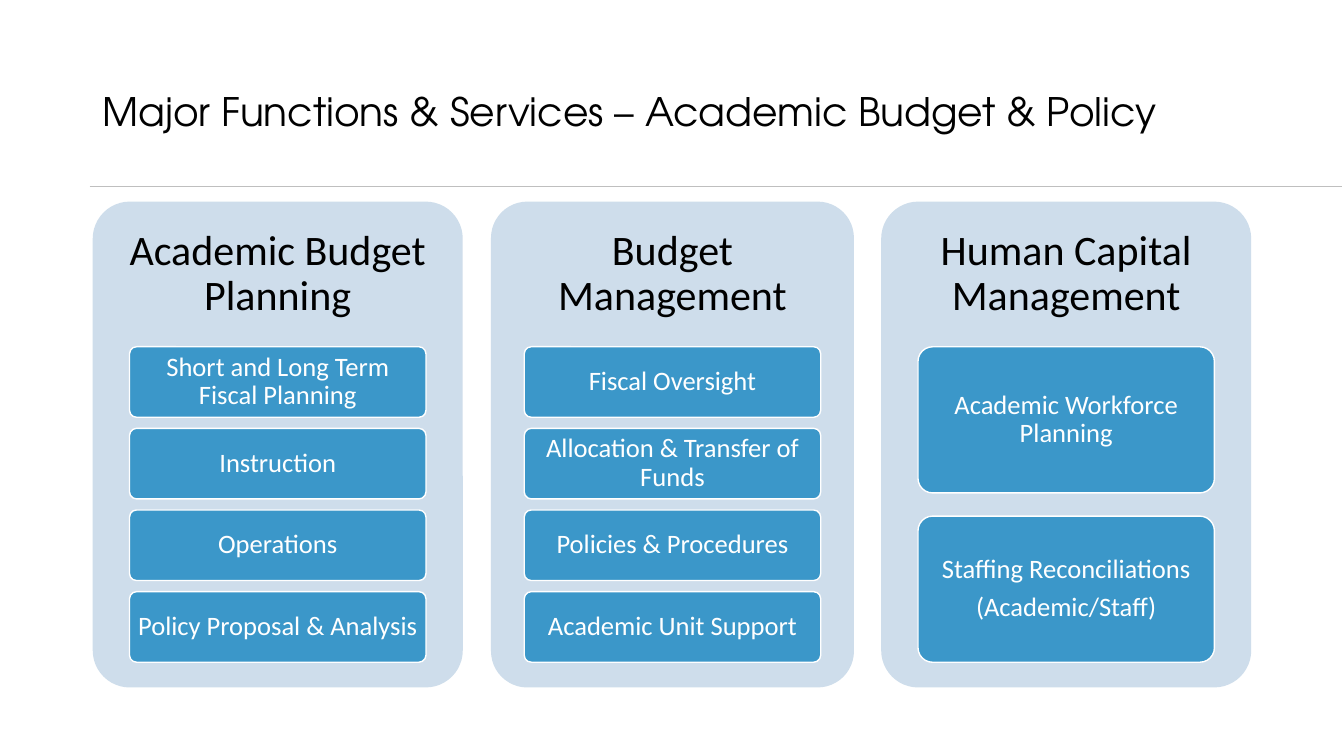
"""Builds the slide of academic budget and policy functions in three cards."""
from dataclasses import dataclass

from lxml import etree
from pptx import Presentation, util as u
from pptx.dml.color import RGBColor
from pptx.enum import shapes, text
from pptx.oxml import ns

COLORS = {
    "ink": "000000",
    "card": "CEDDEB",
    "service": "3B97C9",
    "white": "FFFFFF",
    "rule": "BFBFBF",
}
CARD_TOP, CARD_HEIGHT = 2, 4.82
HEADING_HEIGHT = 1.44
SERVICES_TOP, SERVICES_HEIGHT, SERVICE_WIDTH = 3.44, 3.13, 2.94


@dataclass(frozen=True)
class Card:
    left: float
    width: float
    heading: str
    services: tuple[str, ...]
    service_height: float = 0.7


@dataclass(frozen=True)
class TextStyle:
    size: float
    color: str
    inset_x: float
    inset_y: float
    font: str = "Calibri"
    align: text.PP_ALIGN = text.PP_ALIGN.CENTER
    space_after: float = 0.35


TITLE = TextStyle(28, "ink", 0.1, 0.05, "TeX Gyre Adventor", text.PP_ALIGN.LEFT, 0)
HEADING = TextStyle(30, "ink", 0.12, 0.12)
SERVICE = TextStyle(19, "white", 0.05, 0.04)

CARDS = (
    Card(0.92, 3.67, "Academic Budget Planning", (
        "Short and Long Term Fiscal Planning",
        "Instruction",
        "Operations",
        "Policy Proposal & Analysis",
    )),
    Card(4.87, 3.6, "Budget Management", (
        "Fiscal Oversight",
        "Allocation & Transfer of Funds",
        "Policies & Procedures",
        "Academic Unit Support",
    )),
    Card(8.74, 3.67, "Human Capital Management", (
        "Academic Workforce Planning",
        "Staffing Reconciliations\n(Academic/Staff)",
    ), 1.45),
)


def rgb(name: str) -> RGBColor:
    return RGBColor.from_string(COLORS[name])


def write(holder, words: str, style: TextStyle) -> None:
    frame = holder.text_frame
    frame.text = words
    frame.word_wrap = True
    frame.vertical_anchor = text.MSO_ANCHOR.MIDDLE
    frame.margin_left = frame.margin_right = u.Inches(style.inset_x)
    frame.margin_top = frame.margin_bottom = u.Inches(style.inset_y)
    for paragraph in frame.paragraphs:
        paragraph.alignment = style.align
        paragraph.line_spacing = 0.9
        paragraph.space_after = u.Pt(style.size * style.space_after)
        for run in paragraph.runs:
            run.font.name = style.font
            run.font.size = u.Pt(style.size)
            run.font.color.rgb = rgb(style.color)


def add_label(slide, left: float, top: float, width: float, height: float,
              words: str, style: TextStyle) -> None:
    label = slide.shapes.add_textbox(*map(u.Inches, (left, top, width, height)))
    write(label, words, style)


def add_panel(slide, left: float, top: float, width: float, height: float, fill: str):
    panel = slide.shapes.add_shape(
        shapes.MSO_SHAPE.ROUNDED_RECTANGLE,
        *map(u.Inches, (left, top, width, height)))
    panel.adjustments[0] = 0.1
    panel.shadow.inherit = False
    panel.fill.solid()
    panel.fill.fore_color.rgb = rgb(fill)
    panel.line.fill.background()
    return panel


def add_card(slide, card: Card) -> None:
    add_panel(slide, card.left, CARD_TOP, card.width, CARD_HEIGHT, "card")
    add_label(slide, card.left, CARD_TOP, card.width, HEADING_HEIGHT, card.heading, HEADING)
    service_left = card.left + (card.width - SERVICE_WIDTH) / 2
    pitch = (SERVICES_HEIGHT - card.service_height) / (len(card.services) - 1)
    for row, words in enumerate(card.services):
        service = add_panel(slide, service_left, SERVICES_TOP + row * pitch,
                            SERVICE_WIDTH, card.service_height, "service")
        service.line.color.rgb = rgb("white")
        service.line.width = u.Pt(1)
        write(service, words, SERVICE)


def add_title_rule(slide) -> None:
    rule = slide.shapes.add_connector(
        shapes.MSO_CONNECTOR.STRAIGHT, *map(u.Inches, (0.89, 1.85, 13.31, 1.85)))
    rule.line.color.rgb = rgb("rule")
    rule.line.width = u.Pt(0.5)
    etree.SubElement(rule._element.spPr, ns.qn("a:effectLst"))


def main() -> None:
    deck = Presentation()
    deck.slide_width, deck.slide_height = u.Inches(13.33), u.Inches(7.5)
    slide = deck.slides.add_slide(deck.slide_layouts[6])
    add_title_rule(slide)
    add_label(slide, 0.92, 0.4, 11.65, 1.45,
              "Major Functions & Services – Academic Budget & Policy", TITLE)
    for card in CARDS:
        add_card(slide, card)
    deck.save("out.pptx")


if __name__ == "__main__":
    main()
